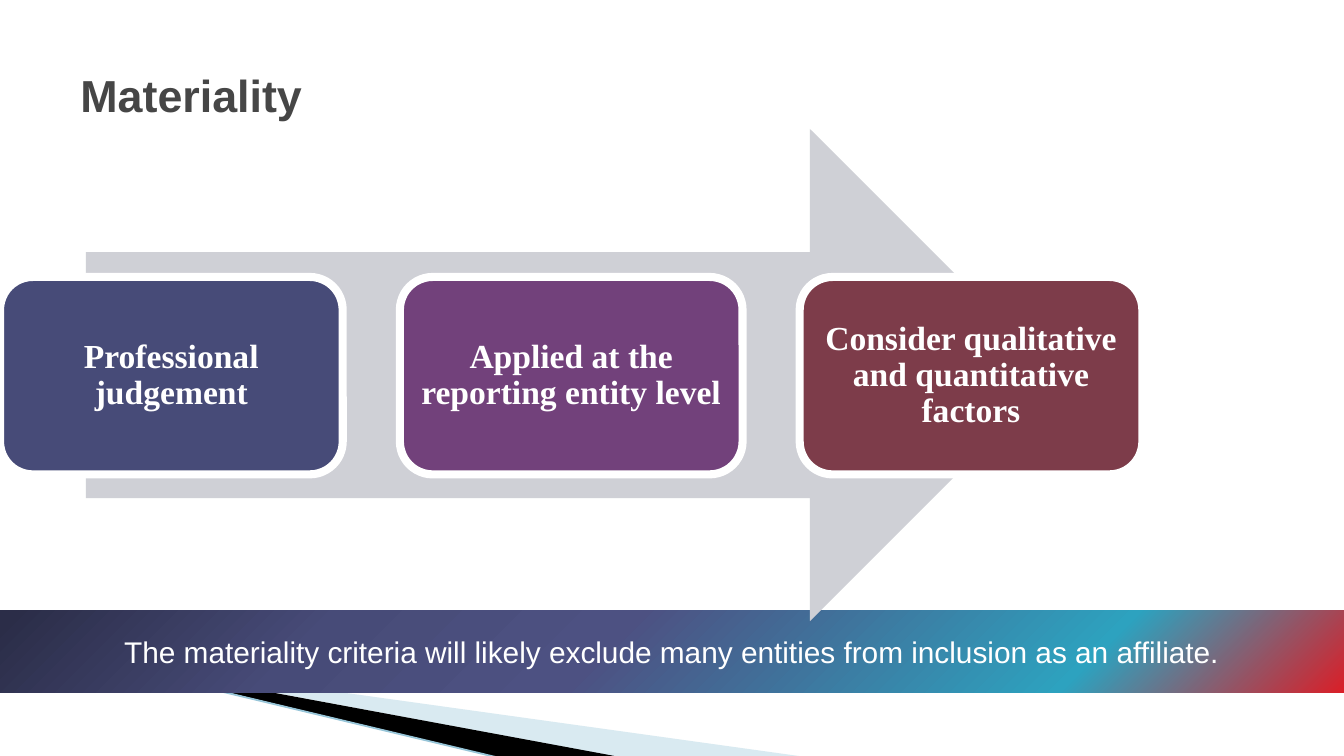
from dataclasses import dataclass

from lxml import etree
from pptx import Presentation
from pptx.dml.color import RGBColor
from pptx.enum.shapes import MSO_CONNECTOR, MSO_SHAPE
from pptx.enum.text import MSO_ANCHOR, PP_ALIGN
from pptx.oxml.ns import qn
from pptx.util import Pt

COLORS = {
    "white": "FFFFFF", "title": "464646", "arrow": "CFD0D6",
    "navy": "474B78", "purple": "72417B", "maroon": "7D3C4A",
    "pale": "A0CBDC", "black": "000000", "edge": "97C5D8",
    "red": "DA1F28", "teal": "2DA2BF", "indigo": "4D5182", "night": "2B2D48",
}
BANNER_STOPS = [(1, "night"), (24, "navy"), (45, "indigo"), (80, "teal"), (100, "red")]


@dataclass
class Wedge:
    points: list[tuple[float, float]]
    color: str
    opacity: int = 100


@dataclass
class Step:
    text: str
    color: str


WEDGES = [
    Wedge([(39.6, 351.4), (428.4, 405.4), (328.3, 405.4)], "pale", 40),
    Wedge([(38.2, 350.6), (329, 405.4), (267.8, 406.1), (38.9, 351.4)], "black"),
]
STEPS = [
    Step("Professional judgement", "navy"),
    Step("Applied at the reporting entity level", "purple"),
    Step("Consider qualitative and quantitative factors", "maroon"),
]
STEP_WIDTH, STEP_HEIGHT, STEP_TOP, STEP_PITCH = 183.6, 105.8, 148.4, 214.2


def rgb(name: str) -> RGBColor:
    return RGBColor.from_string(COLORS[name])


def style_shape(shape, color: str) -> None:
    shape.shadow.inherit = False
    shape.fill.solid()
    shape.fill.fore_color.rgb = rgb(color)
    shape.line.fill.background()


def write_text(shape, text: str, font: str, size: float, color: str,
               bold: bool = False, align=PP_ALIGN.CENTER):
    frame = shape.text_frame
    frame.word_wrap = True
    frame.vertical_anchor = MSO_ANCHOR.MIDDLE
    paragraph = frame.paragraphs[0]
    paragraph.text = text
    paragraph.alignment = align
    paragraph.font.name = font
    paragraph.font.size = Pt(size)
    paragraph.font.bold = bold
    paragraph.font.color.rgb = rgb(color)
    return paragraph


def draw_wedge(slide, wedge: Wedge) -> None:
    start, *rest = wedge.points
    builder = slide.shapes.build_freeform(*start, scale=Pt(1))
    builder.add_line_segments(rest, close=True)
    shape = builder.convert_to_shape()
    style_shape(shape, wedge.color)
    if wedge.opacity < 100:
        color = shape.fill._xPr.find(qn("a:solidFill"))[0]
        etree.SubElement(color, qn("a:alpha"), val=str(wedge.opacity * 1000))


def draw_edge(slide) -> None:
    line = slide.shapes.add_connector(
        MSO_CONNECTOR.STRAIGHT, Pt(-0.7), Pt(342), Pt(267.8), Pt(406.1))
    line.line.color.rgb = rgb("edge")
    line.line.width = Pt(0.95)
    etree.SubElement(line._element.spPr, qn("a:effectLst"))


def draw_banner(slide) -> None:
    banner = slide.shapes.add_shape(
        MSO_SHAPE.RECTANGLE, Pt(0), Pt(326.9), Pt(720), Pt(44.4))
    style_shape(banner, "navy")
    banner.fill.gradient()
    banner.fill.gradient_angle = 315
    stops = banner._element.spPr.find(qn("a:gradFill")).find(qn("a:gsLst"))
    for stop in list(stops):
        stops.remove(stop)
    for position, color in BANNER_STOPS:
        stop = etree.SubElement(stops, qn("a:gs"), pos=str(position * 1000))
        etree.SubElement(stop, qn("a:srgbClr"), val=COLORS[color])
    write_text(banner, "The materiality criteria will likely exclude many "
               "entities from inclusion as an affiliate.", "Arial", 16, "white")


def draw_step(slide, index: int, step: Step) -> None:
    box = slide.shapes.add_shape(
        MSO_SHAPE.ROUNDED_RECTANGLE, Pt(index * STEP_PITCH), Pt(STEP_TOP),
        Pt(STEP_WIDTH), Pt(STEP_HEIGHT))
    style_shape(box, step.color)
    box.line.color.rgb = rgb("white")
    box.line.width = Pt(4.33)
    frame = box.text_frame
    frame.margin_left = frame.margin_right = Pt(4.5)
    frame.margin_top = frame.margin_bottom = Pt(4.5)
    paragraph = write_text(box, step.text, "Times New Roman", 18, "white", bold=True)
    paragraph.line_spacing = 0.9


def main() -> None:
    presentation = Presentation()
    presentation.slide_width, presentation.slide_height = Pt(720), Pt(405)
    slide = presentation.slides.add_slide(presentation.slide_layouts[6])

    # Corner decoration and banner
    for wedge in WEDGES:
        draw_wedge(slide, wedge)
    draw_edge(slide)
    draw_banner(slide)

    # Title
    title = slide.shapes.add_textbox(Pt(36), Pt(16.6), Pt(648), Pt(67.7))
    write_text(title, "Materiality", "Arial", 24, "title", True, PP_ALIGN.LEFT)
    title.text_frame.vertical_anchor = MSO_ANCHOR.MIDDLE

    # Process arrow with its steps
    arrow = slide.shapes.add_shape(
        MSO_SHAPE.RIGHT_ARROW, Pt(46), Pt(69.1), Pt(519.8), Pt(263.7))
    style_shape(arrow, "arrow")
    for index, step in enumerate(STEPS):
        draw_step(slide, index, step)

    presentation.save("out.pptx")


if __name__ == "__main__":
    main()
